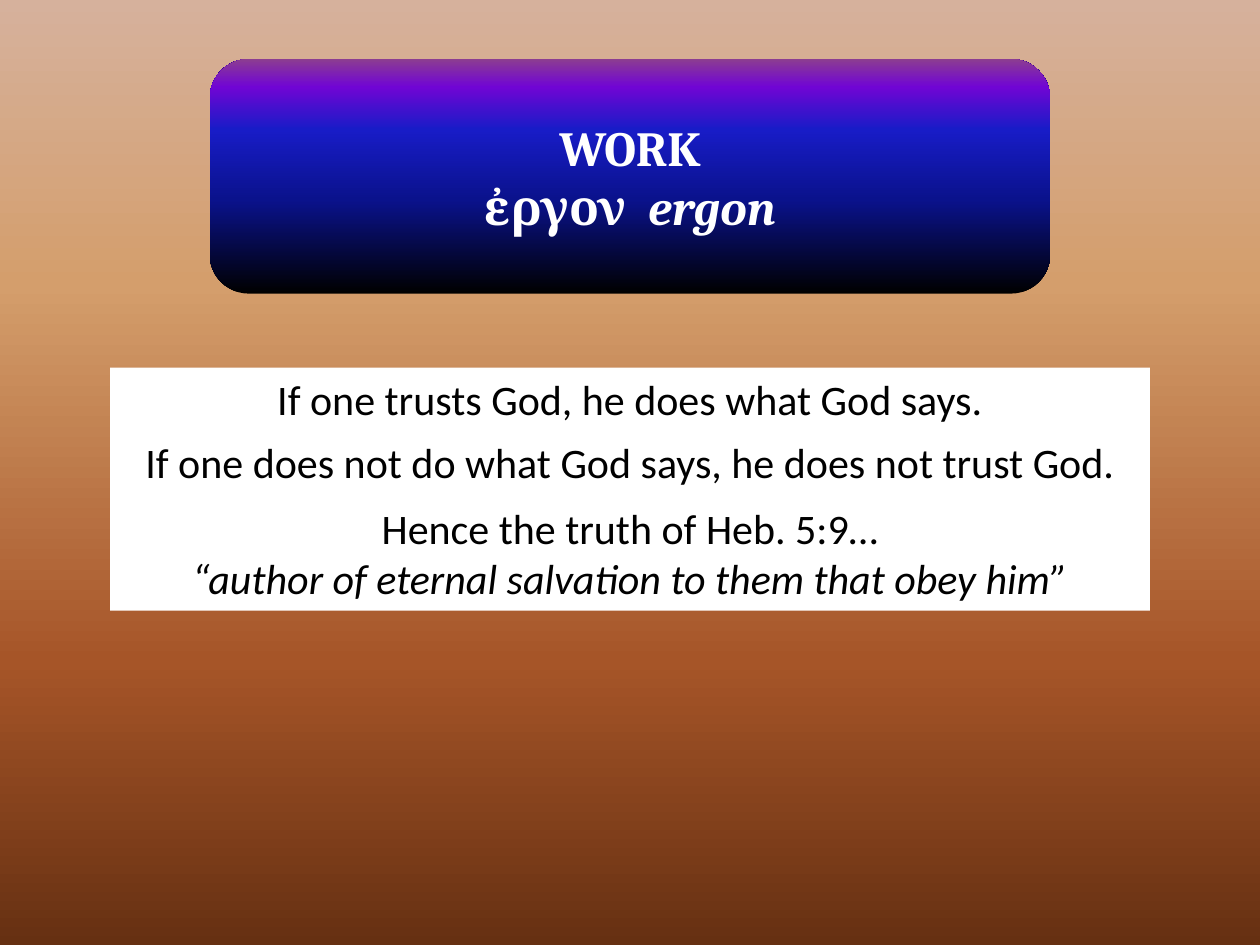
from copy import deepcopy
from dataclasses import dataclass

from pptx import Presentation
from pptx import util as u
from pptx.dml.color import RGBColor
from pptx.enum import shapes, text


@dataclass(frozen=True)
class Theme:
    heading_font: str = "Cambria"
    body_font: str = "Calibri"
    heading_size: int = 28
    body_size: int = 24
    light: str = "FFFFFF"
    dark: str = "000000"
    # Gradient stops: position in percent, colour
    earth: tuple = ((0, "D6B19C"), (30, "D49E6C"), (70, "A65528"), (100, "663012"))
    night: tuple = ((0, "000000"), (40, "0A128C"), (70, "181CC7"),
                    (88, "7005D4"), (100, "8C3D91"))


class SlideBuilder:
    def __init__(self, slide, theme):
        self.slide = slide
        self.theme = theme

    def gradient(self, fill, owner, stops, angle):
        """Fill with any number of stops; the angle runs counter-clockwise."""
        fill.gradient()
        fill.gradient_angle = angle
        stop_list = owner.xpath(".//a:gsLst")[0]
        for _ in stops[2:]:
            stop_list.append(deepcopy(stop_list[0]))
        for stop, (percent, colour) in zip(fill.gradient_stops, stops):
            stop.position = percent / 100
            stop.color.rgb = RGBColor.from_string(colour)

    def background(self):
        self.gradient(self.slide.background.fill, self.slide.element,
                      self.theme.earth, 270)

    def add_lines(self, frame, lines, font, size, colour, bold=None):
        """Each line is a list of (wording, italic) runs."""
        frame.word_wrap = True
        for number, runs in enumerate(lines):
            line = frame.add_paragraph() if number else frame.paragraphs[0]
            line.alignment = text.PP_ALIGN.CENTER
            for wording, italic in runs:
                run = line.add_run()
                run.text = wording
                run.font.name = font
                run.font.size = u.Pt(size)
                run.font.bold = bold
                run.font.italic = italic
                run.font.color.rgb = RGBColor.from_string(colour)

    def banner(self, left, top, width, height, lines):
        banner = self.slide.shapes.add_shape(
            shapes.MSO_SHAPE.ROUNDED_RECTANGLE,
            u.Cm(left), u.Cm(top), u.Cm(width), u.Cm(height))
        banner.shadow.inherit = False
        banner.line.fill.background()
        self.gradient(banner.fill, banner.element, self.theme.night, 90)
        banner.text_frame.vertical_anchor = text.MSO_ANCHOR.MIDDLE
        self.add_lines(banner.text_frame, lines, self.theme.heading_font,
                       self.theme.heading_size, self.theme.light, bold=True)

    def statement(self, left, top, width, height, lines):
        statement = self.slide.shapes.add_textbox(
            u.Cm(left), u.Cm(top), u.Cm(width), u.Cm(height))
        statement.fill.solid()
        statement.fill.fore_color.rgb = RGBColor.from_string(self.theme.light)
        self.add_lines(statement.text_frame, lines, self.theme.body_font,
                       self.theme.body_size, self.theme.dark)


def main():
    deck = Presentation()
    deck.slide_width, deck.slide_height = u.Cm(25.4), u.Cm(19.05)
    builder = SlideBuilder(deck.slides.add_slide(deck.slide_layouts[6]), Theme())
    builder.background()

    # Word under study
    builder.banner(4.23, 1.19, 16.94, 4.73, [
        [("WORK", None)],
        [("ἐργον  ", None), ("ergon", True)],
    ])

    # Argument: top, height, lines
    argument = [
        (7.41, 1.28, [[("If one trusts God, he does what God says.", None)]]),
        (8.68, 1.43, [[("If one does not do what God says, he does not trust God.", None)]]),
        (10, 2.31, [[("Hence the truth of Heb. 5:9…", None)],
                    [("“author of eternal salvation to them that obey him”", True)]]),
    ]
    for top, height, lines in argument:
        builder.statement(2.22, top, 20.96, height, lines)

    deck.save("out.pptx")


if __name__ == "__main__":
    main()
